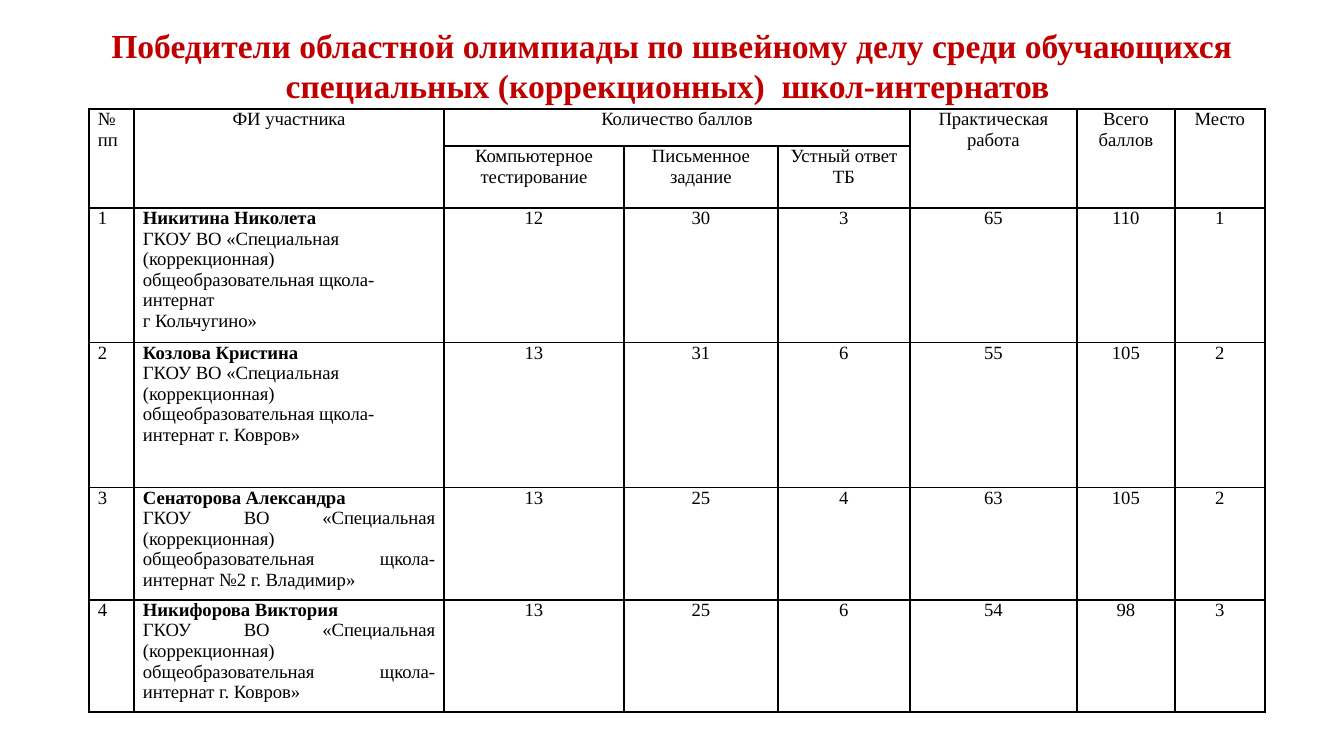
"""Builds a slide with the results table of a regional sewing olympiad."""
from dataclasses import dataclass

from lxml.etree import SubElement
from pptx import Presentation
from pptx.dml.color import RGBColor
from pptx.enum.text import MSO_ANCHOR as Anchor, PP_ALIGN as Align
from pptx.oxml.ns import qn
from pptx.util import Emu, Pt

TITLE = ("Победители областной олимпиады по швейному делу среди обучающихся "
         "специальных (коррекционных)  школ-интернатов ")
TITLE_BOX = (67, 20, 1210, 90)

HEADINGS = [
    (0, 0, 1, 0, "№ пп"),
    (0, 1, 1, 1, "ФИ участника"),
    (0, 2, 0, 4, "Количество баллов"),
    (1, 2, 1, 2, "Компьютерное тестирование"),
    (1, 3, 1, 3, "Письменное задание"),
    (1, 4, 1, 4, "Устный ответ ТБ"),
    (0, 5, 1, 5, "Практическая работа"),
    (0, 6, 1, 6, "Всего баллов"),
    (0, 7, 1, 7, "Место"),
]
SCHOOL = "ГКОУ ВО «Специальная (коррекционная) общеобразовательная щкола-интернат"
WINNERS = [
    ("Никитина Николета", [SCHOOL, "г Кольчугино»"], Align.LEFT, (12, 30, 3, 65, 110, 1)),
    ("Козлова Кристина", [f"{SCHOOL} г. Ковров»"], Align.LEFT, (13, 31, 6, 55, 105, 2)),
    ("Сенаторова Александра ", [f"{SCHOOL} №2 г. Владимир»"], Align.JUSTIFY,
     (13, 25, 4, 63, 105, 2)),
    ("Никифорова Виктория", [f"{SCHOOL} г. Ковров»"], Align.JUSTIFY, (13, 25, 6, 54, 98, 3)),
]

TABLE_LEFT, TABLE_TOP = 89, 109
COLUMN_WIDTHS = [45, 310, 180, 154, 132, 167, 98, 90]
ROW_HEIGHTS = [37, 62, 124, 145, 103, 103]
SIDE_MARGIN = 9


@dataclass(frozen=True)
class Theme:
    font: str = "Times New Roman"
    title_size: int = 18
    table_size: int = 10
    title_color: str = "C00000"
    ink: str = "000000"
    paper: str = "FFFFFF"
    border: int = 1


THEME = Theme()


def px(length):
    return Emu(round(length * 914400 / 134.4))


def write(paragraph, text, size, color, bold=False, align=Align.CENTER):
    paragraph.alignment = align
    run = paragraph.add_run()
    run.text = text
    run.font.name = THEME.font
    run.font.size = Pt(size)
    run.font.bold = bold
    run.font.color.rgb = RGBColor.from_string(color)


def fill_cell(cell, lines):
    for index, (text, bold, align) in enumerate(lines):
        frame = cell.text_frame
        paragraph = frame.add_paragraph() if index else frame.paragraphs[0]
        write(paragraph, text, THEME.table_size, THEME.ink, bold, align)


def style_cell(cell):
    cell.margin_left = cell.margin_right = px(SIDE_MARGIN)
    cell.margin_top = cell.margin_bottom = 0
    properties = cell._tc.get_or_add_tcPr()
    for side in ("a:lnL", "a:lnR", "a:lnT", "a:lnB"):
        line = SubElement(properties, qn(side), w=str(Pt(THEME.border)))
        SubElement(SubElement(line, qn("a:solidFill")), qn("a:srgbClr"), val=THEME.ink)
    cell.fill.solid()
    cell.fill.fore_color.rgb = RGBColor.from_string(THEME.paper)


def add_title(slide):
    frame = slide.shapes.add_textbox(*map(px, TITLE_BOX)).text_frame
    frame.word_wrap = True
    frame.vertical_anchor = Anchor.MIDDLE
    write(frame.paragraphs[0], TITLE, THEME.title_size, THEME.title_color, bold=True)


def add_results(slide):
    table = slide.shapes.add_table(
        len(ROW_HEIGHTS), len(COLUMN_WIDTHS), px(TABLE_LEFT), px(TABLE_TOP),
        px(sum(COLUMN_WIDTHS)), px(sum(ROW_HEIGHTS))).table
    table.first_row = table.horz_banding = False
    for column, width in zip(table.columns, COLUMN_WIDTHS):
        column.width = px(width)
    for row, height in zip(table.rows, ROW_HEIGHTS):
        row.height = px(height)
    for cell in table.iter_cells():
        style_cell(cell)

    for top, left, bottom, right, heading in HEADINGS:
        cell = table.cell(top, left)
        if (top, left) != (bottom, right):
            cell.merge(table.cell(bottom, right))
        fill_cell(cell, [(heading, False, Align.CENTER if left else Align.JUSTIFY)])

    for number, (name, school, align, scores) in enumerate(WINNERS, 1):
        row = number + 1
        fill_cell(table.cell(row, 0), [(str(number), False, Align.JUSTIFY)])
        fill_cell(table.cell(row, 1),
                  [(name, True, align)] + [(line, False, align) for line in school])
        for column, score in enumerate(scores, 2):
            fill_cell(table.cell(row, column), [(str(score), False, Align.CENTER)])


def main():
    deck = Presentation()
    deck.slide_width, deck.slide_height = px(1344), px(756)
    slide = deck.slides.add_slide(deck.slide_layouts[6])
    add_title(slide)
    add_results(slide)
    deck.save("out.pptx")


if __name__ == "__main__":
    main()
